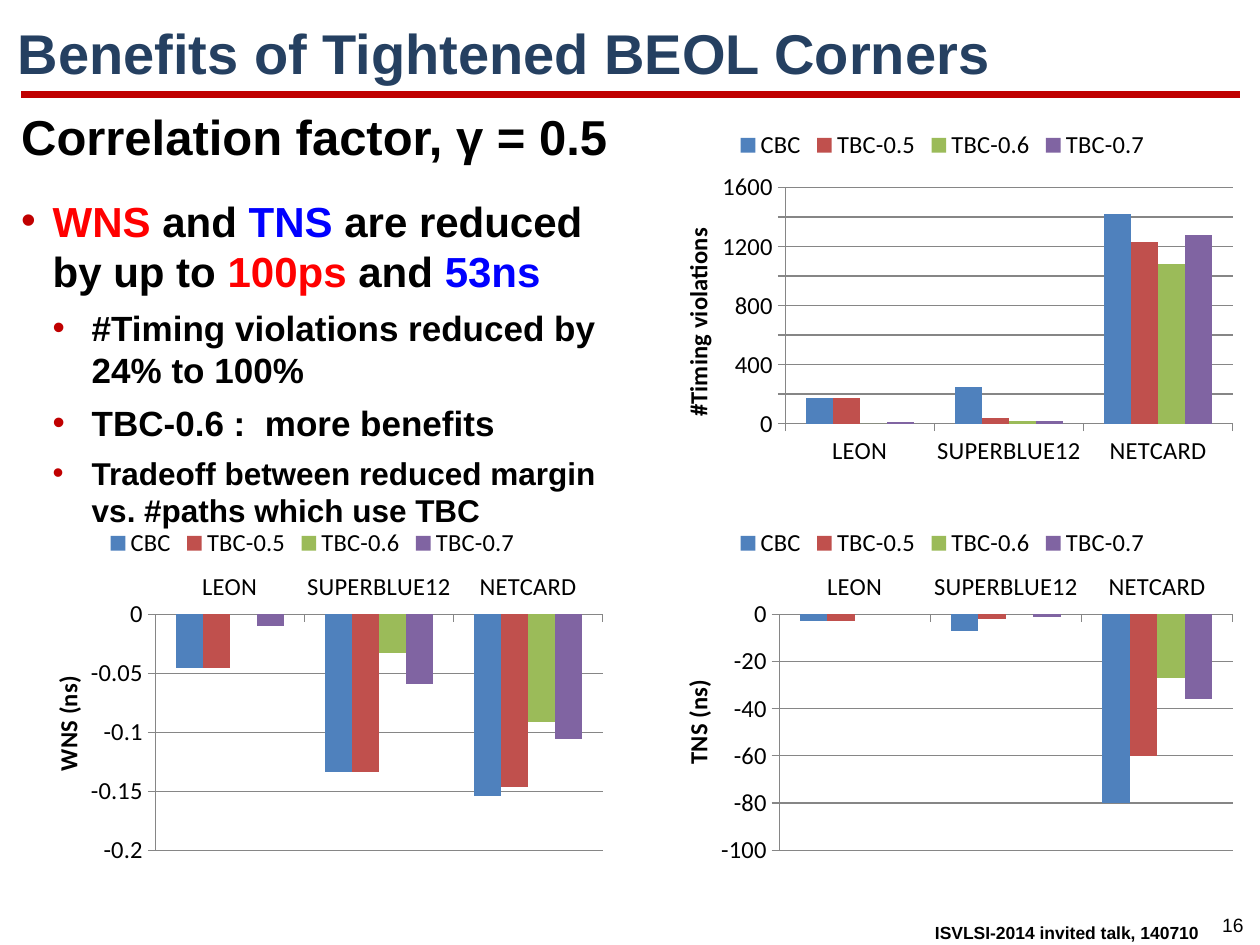
"""Build the slide on the benefits of tightened BEOL corners."""
from lxml.etree import SubElement
from pptx import Presentation
from pptx.chart.data import CategoryChartData
from pptx.dml.color import RGBColor
from pptx.enum.chart import XL_CHART_TYPE, XL_LEGEND_POSITION, XL_TICK_LABEL_POSITION, XL_TICK_MARK
from pptx.enum.shapes import MSO_CONNECTOR
from pptx.enum.text import MSO_ANCHOR, MSO_AUTO_SIZE, PP_ALIGN
from pptx.oxml import parse_xml
from pptx.oxml.ns import nsdecls, qn
from pptx.util import Inches, Pt

BLACK, RED, BLUE, DARK_RED, NAVY, GRAY = "000000", "FF0000", "0000FF", "C00000", "254061", "868686"

TITLE = "Benefits of Tightened BEOL Corners"
LABELS = [
    ("Correlation factor, γ = 0.5", (0.07, 0.8, 5, 0.6), 28, True, PP_ALIGN.LEFT),
    ("ISVLSI-2014 invited talk, 140710", (6.93, 7.27, 2.68, 0.27), 10, True, PP_ALIGN.RIGHT),
    ("16", (9.59, 7.2, 0.39, 0.29), 11, False, PP_ALIGN.CENTER),
]
BULLETS = [
    (0, 24, [("WNS", RED), (" and ", BLACK), ("TNS", BLUE), (" are reduced by up to ", BLACK),
             ("100ps", RED), (" and ", BLACK), ("53ns", BLUE)]),
    (1, 20, [("#Timing violations reduced by 24% to 100%", BLACK)]),
    (1, 20, [("TBC-0.6 :  more benefits", BLACK)]),
    (1, 18, [("Tradeoff between reduced margin vs. #paths which use TBC", BLACK)]),
]
INDENTS = [(0.25, -0.25), (0.56, -0.31)]

CATEGORIES = ["LEON", "SUPERBLUE12", "NETCARD"]
CORNERS = [("CBC", "4F81BD"), ("TBC-0.5", "C0504D"), ("TBC-0.6", "9BBB59"), ("TBC-0.7", "8064A2")]
CHARTS = [
    {"title": "WNS (ns)", "at": (0.08, 4.08), "scale": (-0.2, 0, 0.05), "format": "General",
     "plot": (0.24, 0.28, 0.74, 0.66), "title_at": (0.06, 0.44),
     "values": [(-0.046, -0.134, -0.154), (-0.046, -0.134, -0.146),
                (0, -0.033, -0.091), (-0.01, -0.059, -0.106)]},
    {"title": "TNS (ns)", "at": (5.08, 4.08), "scale": (-100, 0, 20), "format": "0",
     "plot": (0.23, 0.28, 0.75, 0.66), "title_at": (0.06, 0.45),
     "values": [(-3, -7, -80), (-3, -2, -60), (0, 0, -27), (0, -1, -36)]},
    {"title": "#Timing violations", "at": (5.08, 0.92), "scale": (0, 1600, 200), "format": "General",
     "plot": (0.24, 0.2, 0.74, 0.66), "title_at": (0.06, 0.3),
     "values": [(170, 250, 1420), (170, 40, 1230), (0, 20, 1080), (10, 20, 1280)]},
]


def color(value):
    """Return the colour of a hex string."""
    return RGBColor.from_string(value)


def style(font, size, value, bold=True, name="Arial"):
    """Set the size, colour, weight and typeface of a font."""
    font.size, font.bold, font.name = Pt(size), bold, name
    font.color.rgb = color(value)


def add_text_frame(slide, box):
    """Add a wrapping text box and return its frame."""
    frame = slide.shapes.add_textbox(*map(Inches, box)).text_frame
    frame.word_wrap = True
    return frame


def add_title(slide):
    """Fill the title placeholder and draw the rule under it."""
    title = slide.shapes.title
    title.left, title.top, title.width, title.height = map(Inches, (0.04, 0.1, 9.92, 0.62))
    frame = title.text_frame
    frame.text = TITLE
    frame.auto_size = MSO_AUTO_SIZE.NONE
    frame.vertical_anchor = MSO_ANCHOR.MIDDLE
    frame.paragraphs[0].alignment = PP_ALIGN.LEFT
    style(frame.paragraphs[0].runs[0].font, 32, NAVY)
    rule = slide.shapes.add_connector(MSO_CONNECTOR.STRAIGHT, *map(Inches, (0.17, 0.75, 9.84, 0.75)))
    rule.line.color.rgb = color(DARK_RED)
    rule.line.width = Pt(4.5)
    SubElement(rule._element.spPr, qn("a:effectLst"))


def add_bullets(slide):
    """Add the two-level list of findings."""
    frame = add_text_frame(slide, (0.07, 1.5, 5.1, 2.64))
    for index, (level, size, runs) in enumerate(BULLETS):
        paragraph = frame.add_paragraph() if index else frame.paragraphs[0]
        paragraph.level = level
        if index:
            paragraph.space_before = Pt(6)
        properties = paragraph._p.get_or_add_pPr()
        margin, indent = INDENTS[level]
        properties.set("marL", str(Inches(margin)))
        properties.set("indent", str(Inches(indent)))
        bullet_color = SubElement(properties, qn("a:buClr"))
        SubElement(bullet_color, qn("a:srgbClr"), val=DARK_RED)
        SubElement(properties, qn("a:buFont"), typeface="Arial")
        SubElement(properties, qn("a:buChar"), char="•")
        for text, value in runs:
            run = paragraph.add_run()
            run.text = text
            style(run.font, size, value)


def place(element, position, index, inner=False):
    """Give a chart part a manual layout in fractions of the chart."""
    for layout in element.findall(qn("c:layout")):
        element.remove(layout)
    target = '<c:layoutTarget val="inner"/>' if inner else ""
    modes = '<c:xMode val="edge"/><c:yMode val="edge"/>'
    sizes = "".join(f'<c:{key} val="{value}"/>' for key, value in zip("xywh", position))
    element.insert(index, parse_xml(
        f'<c:layout {nsdecls("c")}><c:manualLayout>{target}{modes}{sizes}</c:manualLayout></c:layout>'))


def add_column_chart(slide, item):
    """Add one clustered column chart comparing the corners."""
    data = CategoryChartData()
    data.categories = CATEGORIES
    for (name, _), values in zip(CORNERS, item["values"]):
        data.add_series(name, values)
    chart = slide.shapes.add_chart(XL_CHART_TYPE.COLUMN_CLUSTERED, *map(Inches, item["at"]),
                                   Inches(4.8), Inches(2.84), data).chart
    style(chart.font, 14, BLACK, False, "Calibri")
    chart.has_title = False
    chart.has_legend = True
    chart.legend.position = XL_LEGEND_POSITION.TOP
    chart.legend.include_in_layout = False
    plot = chart.plots[0]
    plot.gap_width, plot.overlap, plot.vary_by_categories = 150, 0, False
    for series, (_, value) in zip(plot.series, CORNERS):
        series.invert_if_negative = False
        series.format.fill.solid()
        series.format.fill.fore_color.rgb = color(value)

    category_axis, value_axis = chart.category_axis, chart.value_axis
    value_axis.minimum_scale, value_axis.maximum_scale, value_axis.major_unit = item["scale"]
    value_axis.has_major_gridlines = True
    value_axis.tick_labels.number_format = item["format"]
    value_axis.tick_labels.number_format_is_linked = False
    if item["scale"][0] < 0:
        category_axis.tick_label_position = XL_TICK_LABEL_POSITION.HIGH
    for axis in (category_axis, value_axis):
        axis.major_tick_mark = XL_TICK_MARK.OUTSIDE
        axis.format.line.color.rgb = color(GRAY)
    value_axis.major_gridlines.format.line.color.rgb = color(GRAY)
    frame = value_axis.axis_title.text_frame
    frame.text = item["title"]
    style(frame.paragraphs[0].runs[0].font, 14, BLACK, True, "Calibri")
    place(value_axis.axis_title._element, item["title_at"], 1)
    place(chart._chartSpace.chart.plotArea, item["plot"], 0, True)


def main():
    """Assemble and save the slide."""
    presentation = Presentation()
    presentation.slide_width, presentation.slide_height = Inches(10), Inches(7.5)
    slide = presentation.slides.add_slide(presentation.slide_layouts[5])
    add_title(slide)
    for text, box, size, bold, alignment in LABELS:
        frame = add_text_frame(slide, box)
        frame.text = text
        frame.paragraphs[0].alignment = alignment
        style(frame.paragraphs[0].runs[0].font, size, BLACK, bold)
    add_bullets(slide)
    for item in CHARTS:
        add_column_chart(slide, item)
    presentation.save("out.pptx")


if __name__ == "__main__":
    main()
